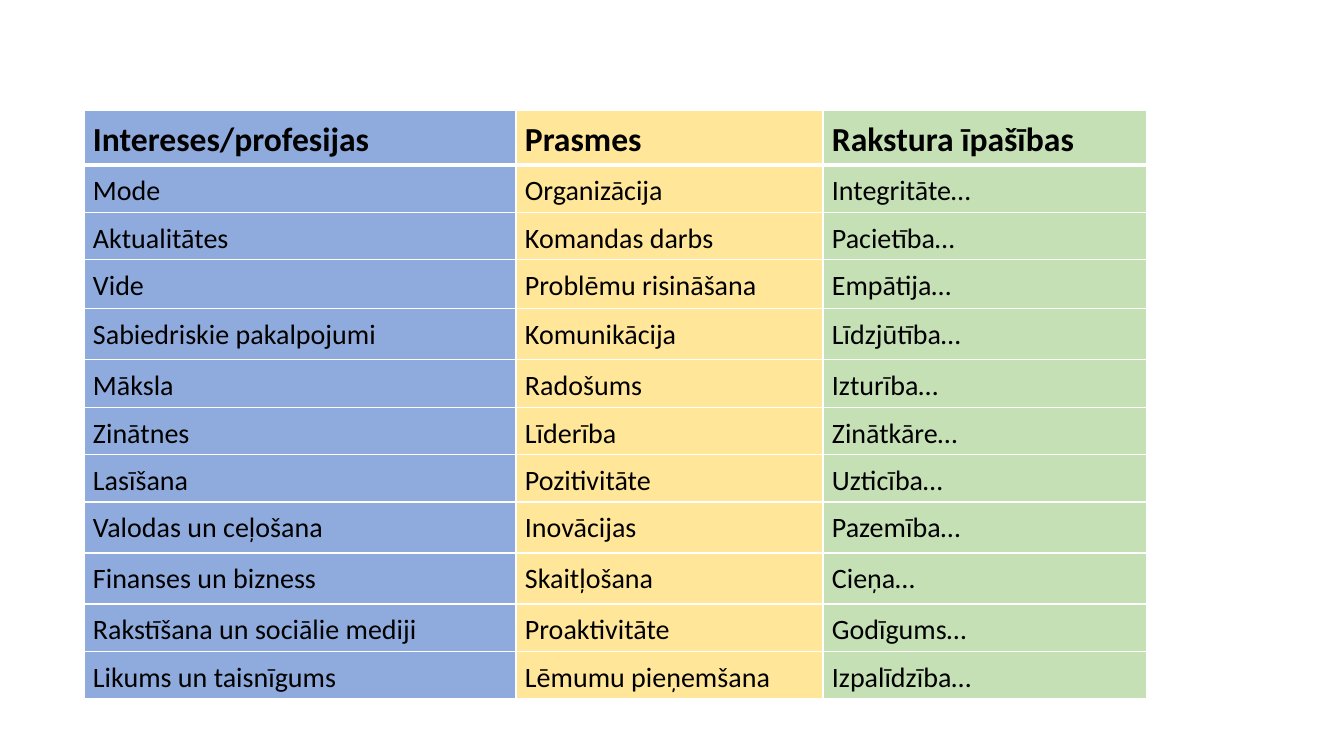
from lxml import etree
from pptx import Presentation
from pptx.dml.color import RGBColor
from pptx.enum.text import PP_ALIGN
from pptx.oxml.ns import qn
from pptx.util import Pt

ROWS = [
    ("Intereses/profesijas", "Prasmes", "Rakstura īpašības"),
    ("Mode", "Organizācija", "Integritāte…"),
    ("Aktualitātes", "Komandas darbs", "Pacietība…"),
    ("Vide", "Problēmu risināšana", "Empātija…"),
    ("Sabiedriskie pakalpojumi", "Komunikācija", "Līdzjūtība…"),
    ("Māksla", "Radošums", "Izturība…"),
    ("Zinātnes", "Līderība", "Zinātkāre…"),
    ("Lasīšana", "Pozitivitāte", "Uzticība…"),
    ("Valodas un ceļošana", "Inovācijas", "Pazemība…"),
    ("Finanses un bizness", "Skaitļošana", "Cieņa…"),
    ("Rakstīšana un sociālie mediji", "Proaktivitāte", "Godīgums…"),
    ("Likums un taisnīgums", "Lēmumu pieņemšana", "Izpalīdzība…"),
]
BLUE = RGBColor(0x8F, 0xAA, 0xDC)
YELLOW = RGBColor(0xFF, 0xE6, 0x99)
GREEN = RGBColor(0xC5, 0xE0, 0xB4)
BLACK = RGBColor(0, 0, 0)
WHITE = RGBColor(0xFF, 0xFF, 0xFF)
JUSTIFY = PP_ALIGN.JUSTIFY

COLUMN_FILLS = [BLUE, YELLOW, GREEN]
COLUMN_WIDTHS = [432, 307, 324]
ROW_HEIGHTS = [51, 43, 43, 49, 51, 43, 43, 43, 51, 51, 44, 45]
TABLE_LEFT, TABLE_TOP, TABLE_HEIGHT = 84, 110, 591
INSET_X, INSET_Y = 9, 4


def px(length):
    return round(length * 914400 / 100.8)


def add_borders(cell, top, bottom):
    """Draw white cell borders; top and bottom widths are in points."""
    properties = cell._tc.get_or_add_tcPr()
    for side, width in (("L", 1), ("R", 1), ("T", top), ("B", bottom)):
        line = etree.SubElement(properties, qn(f"a:ln{side}"), w=str(Pt(width)))
        fill = etree.SubElement(line, qn("a:solidFill"))
        etree.SubElement(fill, qn("a:srgbClr"), val=str(WHITE))


def fill_cell(cell, text, row, column):
    is_header = row == 0
    add_borders(cell, top=3 if row == 1 else 1, bottom=3 if is_header else 1)
    cell.fill.solid()
    cell.fill.fore_color.rgb = COLUMN_FILLS[column]
    cell.margin_left = cell.margin_right = px(INSET_X)
    cell.margin_top = cell.margin_bottom = px(INSET_Y)

    paragraph = cell.text_frame.paragraphs[0]
    paragraph.text = text
    paragraph.alignment = JUSTIFY
    paragraph.line_spacing = 1.15
    paragraph.space_after = Pt(10 if row == column == 0 else 8)
    font = paragraph.runs[0].font
    font.name = "Calibri"
    font.size = Pt(24 if is_header else 20)
    font.bold = is_header
    font.color.rgb = BLACK


def main():
    presentation = Presentation()
    presentation.slide_width, presentation.slide_height = px(1344), px(756)
    slide = presentation.slides.add_slide(presentation.slide_layouts[6])

    frame = slide.shapes.add_table(
        len(ROWS), len(COLUMN_WIDTHS), px(TABLE_LEFT), px(TABLE_TOP),
        px(sum(COLUMN_WIDTHS)), px(TABLE_HEIGHT))
    table = frame.table
    for column, width in zip(table.columns, COLUMN_WIDTHS):
        column.width = px(width)
    for row, height in zip(table.rows, ROW_HEIGHTS):
        row.height = px(height)
    frame.height = px(TABLE_HEIGHT)

    for row, texts in enumerate(ROWS):
        for column, text in enumerate(texts):
            fill_cell(table.cell(row, column), text, row, column)

    presentation.save("out.pptx")


if __name__ == "__main__":
    main()
